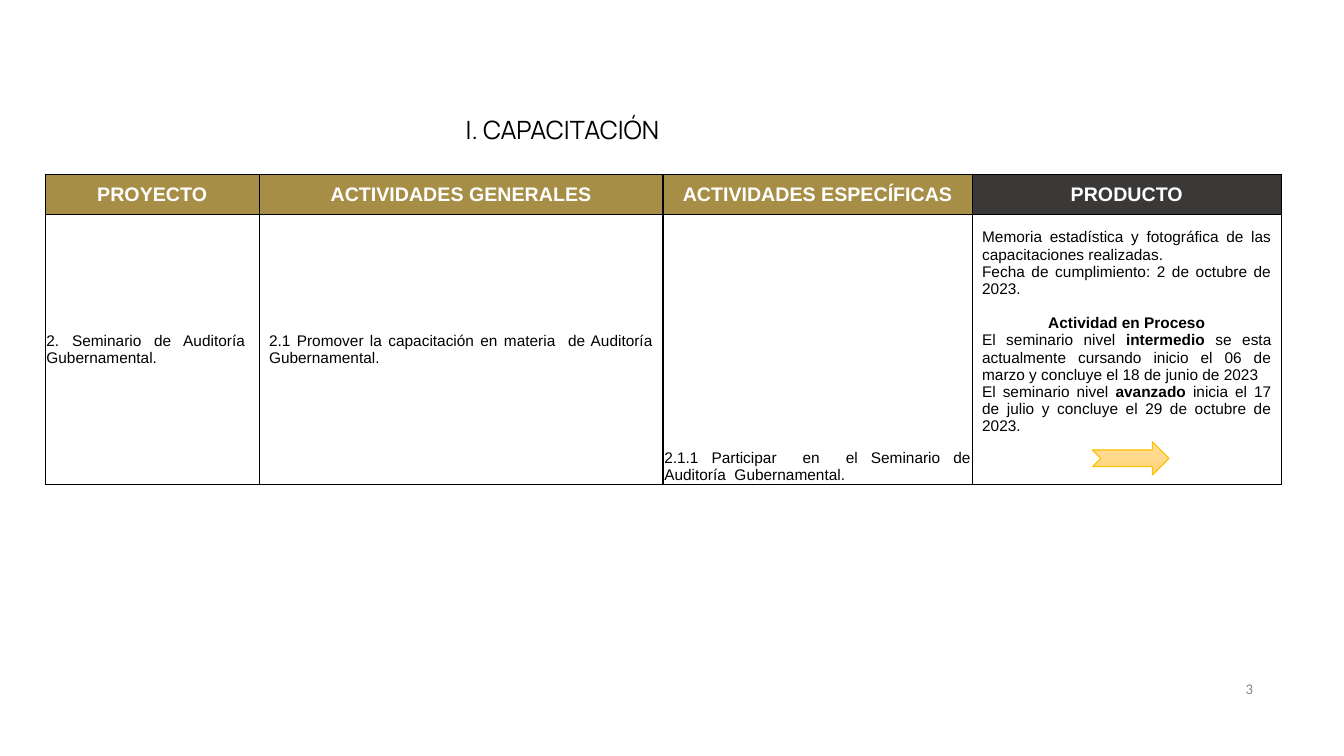
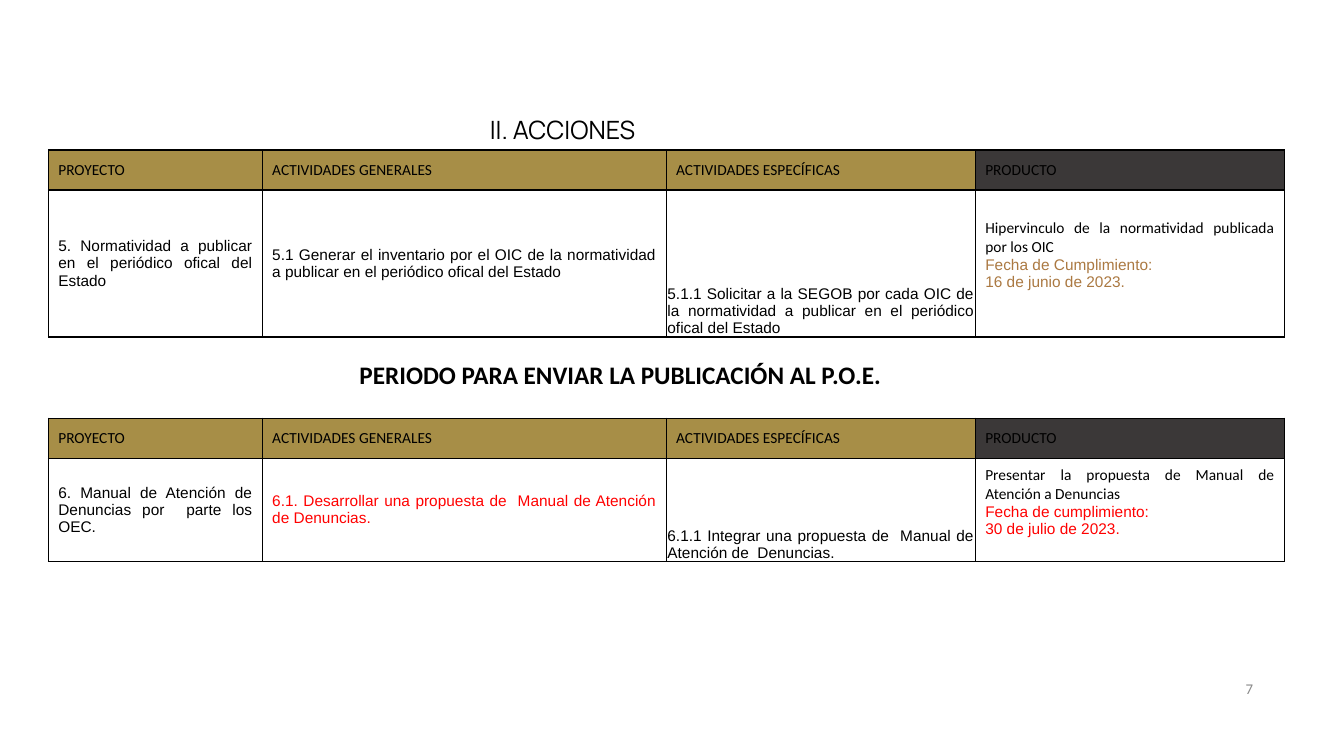
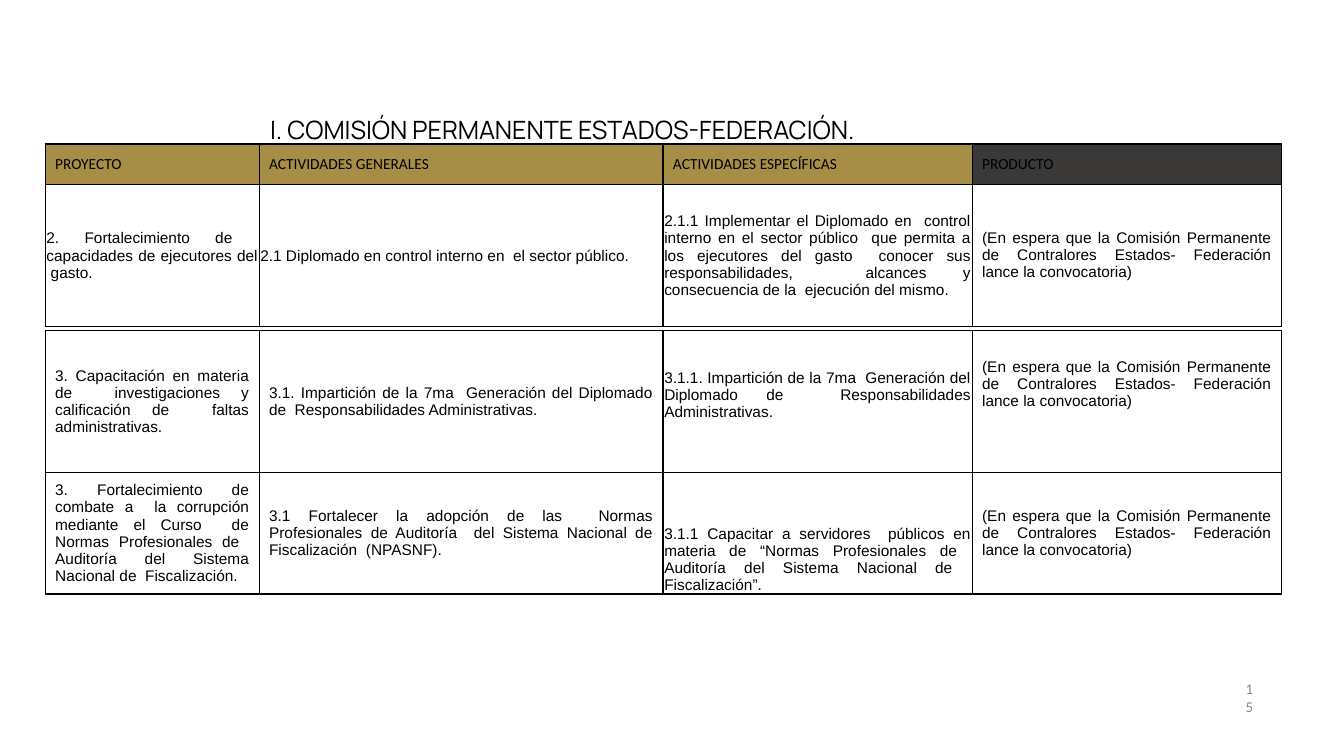
from lxml import etree
from pptx import Presentation
from pptx.dml.color import RGBColor
from pptx.enum.shapes import MSO_SHAPE
from pptx.enum.text import MSO_ANCHOR, MSO_AUTO_SIZE, PP_ALIGN
from pptx.oxml.ns import qn
from pptx.util import Cm, Pt

LEFT, CENTER, JUST = PP_ALIGN.LEFT, PP_ALIGN.CENTER, PP_ALIGN.JUSTIFY
MIDDLE, BOTTOM = MSO_ANCHOR.MIDDLE, MSO_ANCHOR.BOTTOM
NO_FIT = MSO_AUTO_SIZE.NONE
ARROW = MSO_SHAPE.NOTCHED_RIGHT_ARROW

BLACK = RGBColor(0x00, 0x00, 0x00)
WHITE = RGBColor(0xFF, 0xFF, 0xFF)
GOLD = RGBColor(0xA7, 0x8E, 0x47)
DARK = RGBColor(0x3B, 0x38, 0x38)
GRAY = RGBColor(0x89, 0x89, 0x89)
BROWN = RGBColor(0xAB, 0x79, 0x42)
RED = RGBColor(0xFF, 0x00, 0x00)
AMBER = RGBColor(0xFF, 0xC0, 0x00)
PALE = RGBColor(0xFF, 0xDC, 0x9B)
PEACH = RGBColor(0xFF, 0xD4, 0x78)

WIDTHS = [5.39, 10.18, 7.79, 7.79]
HEADS = ["PROYECTO", "ACTIVIDADES GENERALES", "ACTIVIDADES ESPECÍFICAS", "PRODUCTO"]
FILLS = [GOLD, GOLD, GOLD, DARK]
PLAIN = {"font": "Calibri"}
STRONG = {"size": 14, "color": WHITE, "bold": True, "align": CENTER}
PAD = {"side": 0.25, "top": 0.13, "low": 0.13, "anchor": MIDDLE}
TIGHT = {"side": 0.03, "top": 0.03, "low": 0, "anchor": MIDDLE}
BASE = {**TIGHT, "anchor": BOTTOM}
WAIT = [("(En espera que la Comisión Permanente de Contralores Estados- Federación lance la convocatoria)", {})]


def write(frame, text, font="Arial", size=11, color=BLACK, bold=False, align=JUST, before=0):
    para = frame.paragraphs[0]
    if para.runs:
        para = frame.add_paragraph()
        para.space_before = Pt(before)
    para.alignment = align
    for i, part in enumerate(text.split("*")):
        run = para.add_run()
        run.text = part
        run.font.name = font
        run.font.size = Pt(size)
        run.font.bold = bold or i % 2 == 1
        run.font.color.rgb = color


def grid(slide, left, top, high, cells, head=None):
    rows = [(high, cells, [None] * 4)]
    if head:
        rows.insert(0, (1.01, [([(name, head)], PAD) for name in HEADS], FILLS))
    total = sum(row[0] for row in rows)
    frame = slide.shapes.add_table(len(rows), 4, Cm(left), Cm(top), Cm(sum(WIDTHS)), Cm(total))
    table = frame.table
    table.first_row = False
    table.horz_banding = False
    for col, width in zip(table.columns, WIDTHS):
        col.width = Cm(width)
    for r, (tall, items, fills) in enumerate(rows):
        table.rows[r].height = Cm(tall)
        for c, ((lines, place), fill) in enumerate(zip(items, fills)):
            cell = table.cell(r, c)
            cell.margin_left = cell.margin_right = Cm(place["side"])
            cell.margin_top = Cm(place["top"])
            cell.margin_bottom = Cm(place["low"])
            cell.vertical_anchor = place["anchor"]
            props = cell._tc.get_or_add_tcPr()
            for edge in ("a:lnL", "a:lnR", "a:lnT", "a:lnB"):
                line = etree.SubElement(props, qn(edge), w=str(Pt(1)))
                solid = etree.SubElement(line, qn("a:solidFill"))
                etree.SubElement(solid, qn("a:srgbClr"), val=str(BLACK))
            if fill:
                cell.fill.solid()
                cell.fill.fore_color.rgb = fill
            else:
                cell.fill.background()
            for text, style in lines:
                write(cell.text_frame, text, **style)


deck = Presentation()
deck.slide_width = Cm(33.87)
deck.slide_height = Cm(19.05)

slides = []
for name, page in [
    ("I. CAPACITACIÓN", "3"),
    ("II. ACCIONES", "7"),
    ("I. COMISIÓN PERMANENTE ESTADOS-FEDERACIÓN.", "15"),
]:
    slide = deck.slides.add_slide(deck.slide_layouts[5])
    slides.append(slide)
    title = slide.shapes.title
    title.left, title.top, title.width, title.height = Cm(3.61), Cm(2.84), Cm(21.13), Cm(0.81)
    frame = title.text_frame
    frame.auto_size = NO_FIT
    frame.vertical_anchor = MIDDLE
    frame.margin_left = frame.margin_right = frame.margin_bottom = 0
    frame.margin_top = Cm(0.03)
    write(frame, name, font="Manrope", size=18, align=CENTER)
    frame = slide.shapes.add_textbox(Cm(31.29), Cm(17.12), Cm(0.38), Cm(1.83)).text_frame
    frame.word_wrap = True
    frame.margin_top = frame.margin_right = frame.margin_bottom = 0
    frame.margin_left = Cm(0.1)
    write(frame, page, font="Calibri", size=10.6, color=GRAY, align=LEFT)

train, acts, board = slides

grid(train, 1.14, 4.39, 6.8, [
    ([("2. Seminario de Auditoría  Gubernamental.", {})], TIGHT),
    ([("2.1 Promover la capacitación en materia  de Auditoría Gubernamental.", {})], PAD),
    ([("2.1.1 Participar  en  el Seminario de Auditoría  Gubernamental.", {})], BASE),
    ([
        ("Memoria estadística y fotográfica de las capacitaciones realizadas.", {}),
        ("Fecha de cumplimiento: 2 de octubre de 2023.", {}),
        ("Actividad en Proceso", {"bold": True, "align": CENTER, "before": 12.3}),
        ("El seminario nivel *intermedio* se esta actualmente cursando inicio el 06 de marzo y concluye el 18 de junio de 2023", {}),
        ("El seminario nivel *avanzado* inicia el 17 de julio y concluye el 29 de octubre de 2023.", {}),
    ], {**PAD, "low": 1}),
], STRONG)

arrow = train.shapes.add_shape(ARROW, Cm(27.53), Cm(11.13), Cm(1.93), Cm(0.84))
arrow.shadow.inherit = False
arrow.fill.gradient()
arrow.fill.gradient_angle = 270
for stop, color in zip(arrow.fill.gradient_stops, (PALE, PEACH)):
    stop.color.rgb = color
arrow.line.color.rgb = AMBER
arrow.line.width = Pt(0.75)

grid(acts, 1.22, 3.78, 3.7, [
    ([("5. Normatividad a publicar en el periódico ofical del Estado", {})], PAD),
    ([("5.1 Generar el inventario por el OIC de la normatividad a publicar en el periódico ofical del Estado", {})], PAD),
    ([("5.1.1 Solicitar a la SEGOB por cada OIC de la normatividad a publicar en el periódico ofical del Estado", {})], BASE),
    ([
        ("Hipervinculo de la normatividad publicada por los OIC", PLAIN),
        ("Fecha de Cumplimiento:", {"color": BROWN}),
        ("16 de junio de 2023.", {"color": BROWN}),
    ], {**PAD, "low": 0.57}),
], PLAIN)

frame = acts.shapes.add_textbox(Cm(8.36), Cm(8.94), Cm(14.55), Cm(1.02)).text_frame
frame.word_wrap = True
write(frame, "PERIODO PARA ENVIAR LA PUBLICACIÓN AL P.O.E.", font="Calibri", size=18, bold=True, align=CENTER)

grid(acts, 1.22, 10.54, 2.6, [
    ([("6. Manual de Atención de Denuncias por  parte los OEC.", {})], PAD),
    ([("6.1. Desarrollar una propuesta de  Manual de Atención de Denuncias.", {"color": RED})], PAD),
    ([("6.1.1 Integrar una propuesta de  Manual de Atención de  Denuncias.", {})], BASE),
    ([
        ("Presentar la propuesta de Manual de Atención a Denuncias", PLAIN),
        ("Fecha de cumplimiento:", {"color": RED}),
        ("30 de julio de 2023.", {"color": RED}),
    ], {**PAD, "low": 0.55}),
], PLAIN)

grid(board, 1.14, 3.63, 3.58, [
    ([("2. Fortalecimiento de  capacidades de ejecutores del  gasto.", {})], TIGHT),
    ([("2.1 Diplomado en control interno en  el sector público.", {})], TIGHT),
    ([("2.1.1 Implementar el Diplomado en  control interno en el sector público  que permita a los ejecutores del gasto  conocer sus responsabilidades,  alcances y consecuencia de la  ejecución del mismo.", {})], TIGHT),
    (WAIT, PAD),
], PLAIN)

grid(board, 1.14, 8.33, 3.58, [
    ([("3. Capacitación en materia de  investigaciones y calificación de  faltas administrativas.", {})], PAD),
    ([("3.1. Impartición de la 7ma  Generación del Diplomado de  Responsabilidades Administrativas.", {})], PAD),
    ([("3.1.1. Impartición de la 7ma  Generación del Diplomado de  Responsabilidades Administrativas.", {})], {**BASE, "low": 1.3}),
    (WAIT, {**PAD, "low": 1}),
])

grid(board, 1.14, 11.91, 3.05, [
    ([("3. Fortalecimiento de combate a  la corrupción mediante el Curso  de Normas Profesionales de  Auditoría del Sistema Nacional de  Fiscalización.", {})], PAD),
    ([("3.1 Fortalecer la adopción de las  Normas Profesionales de Auditoría  del Sistema Nacional de Fiscalización  (NPASNF).", {})], PAD),
    ([("3.1.1 Capacitar a servidores  públicos en materia de “Normas Profesionales de  Auditoría del Sistema Nacional de  Fiscalización”.", {})], BASE),
    (WAIT, PAD),
])

deck.save("out.pptx")
